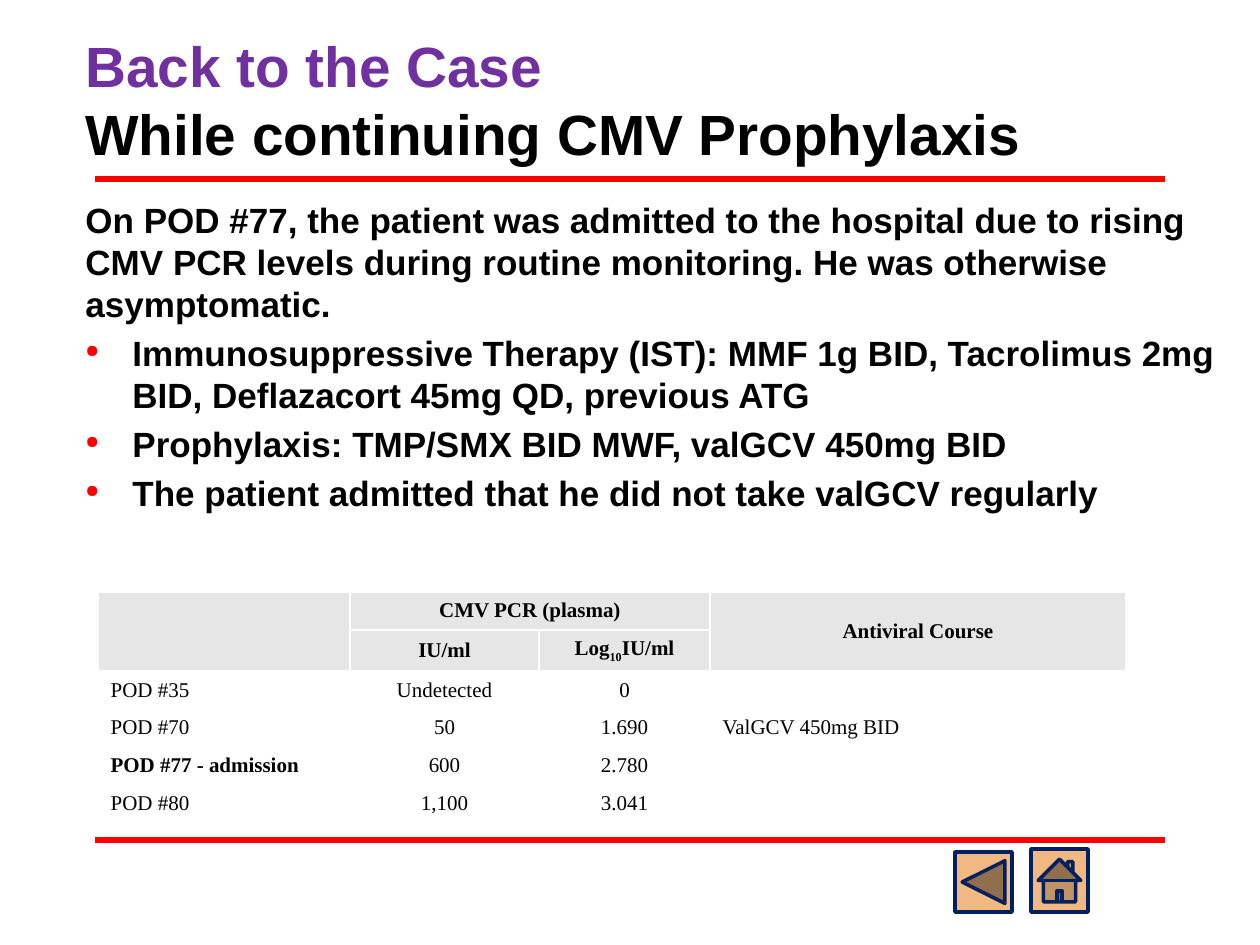
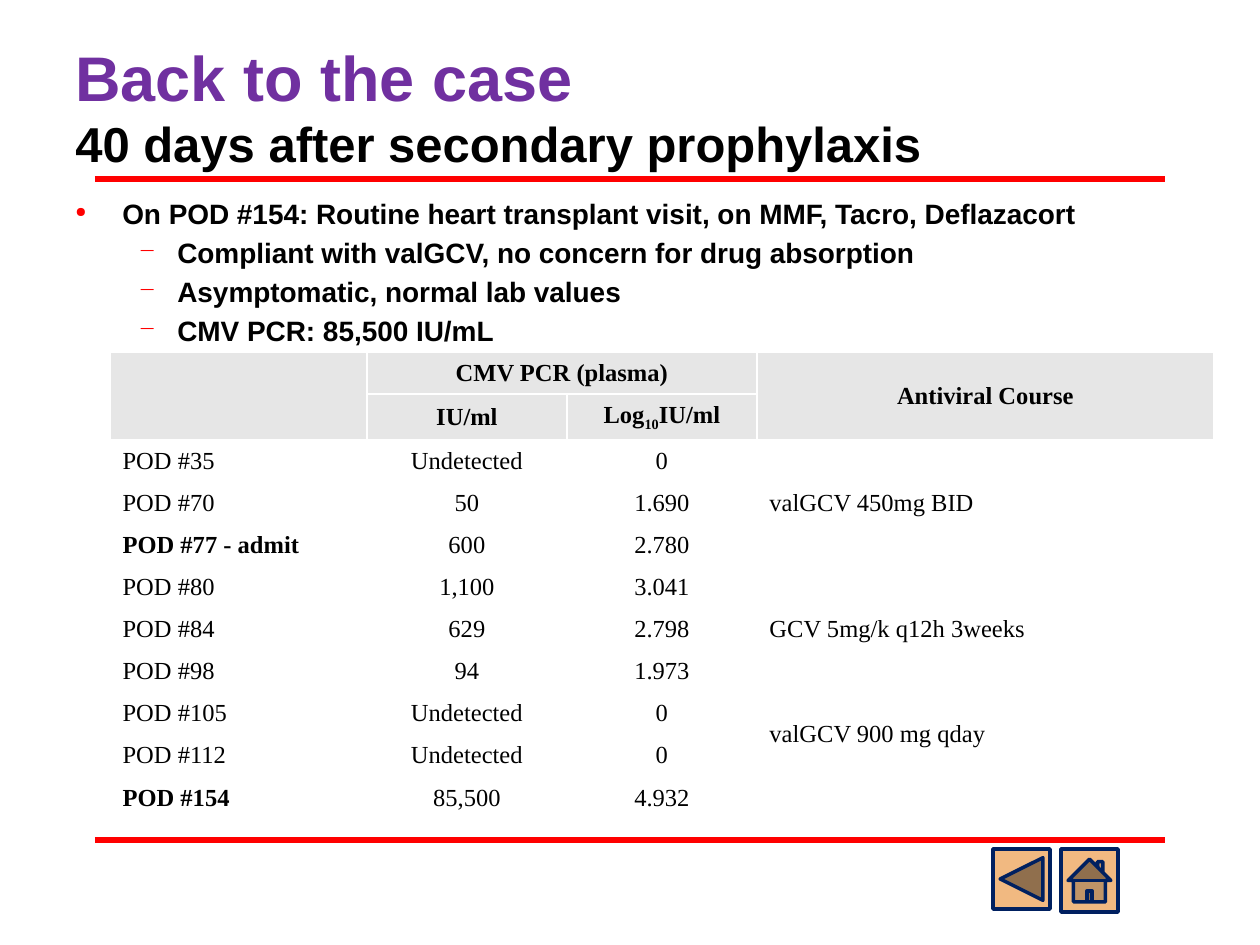
import pptx
import pptx.util
import pptx.dml.color
import pptx.enum.shapes
import pptx.enum.text
import pptx.oxml.ns
import lxml.etree
from dataclasses import dataclass

PX = 914400 / 126
WIDE, HIGH = 1260, 945
COLORS = {
    "title": "7030A0",
    "text": "000000",
    "rule": "FF0000",
    "head": "E6E6E6",
    "grid": "FFFFFF",
    "button": "F1B981",
    "edge": "002060",
}
SANS, SERIF = "Arial", "Times New Roman"
SHAPES = pptx.enum.shapes.MSO_SHAPE
ALIGN = pptx.enum.text.PP_ALIGN
ANCHOR = pptx.enum.text.MSO_ANCHOR


@dataclass
class Box:
    left: int
    top: int
    width: int
    height: int

    def emu(self) -> list[int]:
        return [px(n) for n in (self.left, self.top, self.width, self.height)]


@dataclass
class Line:
    text: str
    size: float
    color: str


@dataclass
class Bullet:
    mark: str
    scale: int
    left: int
    hang: int


@dataclass
class Point:
    text: str
    bullet: Bullet | None = None


@dataclass
class Row:
    day: str
    count: str
    log: str
    bold: bool = False


@dataclass
class Course:
    text: str
    first: int
    last: int


@dataclass
class Grid:
    box: Box
    size: int
    cols: list[int]
    sub: int
    rows: list[Row]
    drugs: list[Course]


@dataclass
class Page:
    title_box: Box
    title: list[Line]
    body_box: Box
    size: int
    points: list[Point]
    grid: Grid
    back: Box
    home: Box


DOT = Bullet("●", 50, 47, 47)
DASH = Bullet("─", 80, 102, 39)

EARLY = [
    Row("POD #35", "Undetected", "0"),
    Row("POD #70", "50", "1.690"),
]
DAY_80 = Row("POD #80", "1,100", "3.041")

PAGES = [
    Page(
        Box(73, 53, 1134, 120),
        [Line("Back to the Case", 32.4, "title"),
         Line("While continuing CMV Prophylaxis", 32.4, "text")],
        Box(73, 192, 1176, 640), 20,
        [Point("On POD #77, the patient was admitted to the hospital due to rising "
               "CMV PCR levels during routine monitoring. He was otherwise asymptomatic."),
         Point("Immunosuppressive Therapy (IST): MMF 1g BID, Tacrolimus 2mg BID, "
               "Deflazacort 45mg QD, previous ATG", DOT),
         Point("Prophylaxis: TMP/SMX BID MWF, valGCV 450mg BID", DOT),
         Point("The patient admitted that he did not take valGCV regularly", DOT)],
        Grid(Box(98, 592, 1028, 219), 12, [252, 189, 171, 416], 39,
             [*EARLY, Row("POD #77 - admission", "600", "2.780", True), DAY_80],
             [Course("ValGCV 450mg BID", 0, 2)]),
        Box(955, 852, 57, 60), Box(1031, 849, 57, 63),
    ),
    Page(
        Box(63, 21, 1134, 158),
        [Line("Back to the case", 36, "title"),
         Line("40 days after secondary prophylaxis", 28, "text")],
        Box(63, 190, 1124, 718), 16,
        [Point("On POD #154: Routine heart transplant visit, on MMF, Tacro, Deflazacort", DOT),
         Point("Compliant with valGCV, no concern for drug absorption", DASH),
         Point("Asymptomatic, normal lab values", DASH),
         Point("CMV PCR: 85,500 IU/mL", DASH)],
        Grid(Box(110, 352, 1104, 442), 14, [257, 200, 190, 457], 43,
             [*EARLY, Row("POD #77 - admit", "600", "2.780", True), DAY_80,
              Row("POD #84", "629", "2.798"),
              Row("POD #98", "94", "1.973"),
              Row("POD #105", "Undetected", "0"),
              Row("POD #112", "Undetected", "0"),
              Row("POD #154", "85,500", "4.932", True)],
             [Course("valGCV 450mg BID", 0, 2),
              Course("GCV 5mg/k q12h 3weeks", 3, 5),
              Course("valGCV 900 mg qday", 6, 7)]),
        Box(993, 849, 57, 60), Box(1061, 849, 57, 63),
    ),
]


def px(count: float) -> int:
    return round(count * PX)


def rgb(name: str) -> pptx.dml.color.RGBColor:
    return pptx.dml.color.RGBColor.from_string(COLORS[name])


def add_tag(parent, tag: str, **attrs: str):
    return lxml.etree.SubElement(parent, pptx.oxml.ns.qn(tag), attrs)


def set_font(font, name: str, size: float, bold: bool) -> None:
    font.name, font.size, font.bold = name, pptx.util.Pt(size), bold
    font.color.rgb = rgb("text")


def add_rule(slide, top: int) -> None:
    kind = pptx.enum.shapes.MSO_CONNECTOR.STRAIGHT
    rule = slide.shapes.add_connector(kind, px(95), px(top), px(1165), px(top))
    rule.line.color.rgb = rgb("rule")
    rule.line.width = pptx.util.Pt(3)
    add_tag(rule._element.spPr, "a:effectLst")


def add_title(slide, box: Box, lines: list[Line]) -> None:
    frame = slide.shapes.add_textbox(*box.emu()).text_frame
    frame.word_wrap = True
    frame.vertical_anchor = ANCHOR.BOTTOM
    para = frame.paragraphs[0]
    para.font.name, para.font.bold = SANS, True
    for index, line in enumerate(lines):
        if index:
            para.add_line_break()
        run = para.add_run()
        run.text = line.text
        run.font.size = pptx.util.Pt(line.size)
        run.font.color.rgb = rgb(line.color)


def set_bullet(para, bullet: Bullet) -> None:
    """Give an indented bullet; call before the paragraph font is set."""
    props = para._p.get_or_add_pPr()
    props.set("marL", str(px(bullet.left)))
    props.set("indent", str(-px(bullet.hang)))
    add_tag(add_tag(props, "a:buClr"), "a:srgbClr", val=COLORS["rule"])
    add_tag(props, "a:buSzPct", val=str(bullet.scale * 1000))
    add_tag(props, "a:buChar", char=bullet.mark)


def add_body(slide, box: Box, size: int, points: list[Point]) -> None:
    frame = slide.shapes.add_textbox(*box.emu()).text_frame
    frame.word_wrap = True
    for index, point in enumerate(points):
        para = frame.add_paragraph() if index else frame.paragraphs[0]
        if point.bullet:
            set_bullet(para, point.bullet)
        para.text = point.text
        para.space_before = pptx.util.Pt(size * 0.2)
        set_font(para.font, SANS, size, True)


def style_cell(cell, size: int, head: bool) -> None:
    """Set fill and borders, and keep an empty cell as low as its row."""
    if head:
        cell.fill.solid()
        cell.fill.fore_color.rgb = rgb("head")
    else:
        cell.fill.background()
    props = cell._tc.get_or_add_tcPr()
    for index, side in enumerate(("a:lnL", "a:lnR", "a:lnT", "a:lnB")):
        edge = add_tag(props, side, w="12700")
        add_tag(add_tag(edge, "a:solidFill"), "a:srgbClr", val=COLORS["grid"])
        props.insert(index, edge)
    add_tag(cell.text_frame.paragraphs[0]._p, "a:endParaRPr", sz=str(size * 100))


def write_cell(cell, parts: list[str], size: int, bold: bool, center: bool) -> None:
    """Write the parts in turn; every second one is a subscript."""
    cell.vertical_anchor = ANCHOR.MIDDLE
    para = cell.text_frame.paragraphs[0]
    para.alignment = ALIGN.CENTER if center else ALIGN.LEFT
    set_font(para.font, SERIF, size, bold)
    for index, part in enumerate(parts):
        run = para.add_run()
        run.text = part
        if index % 2:
            run._r.get_or_add_rPr().set("baseline", "-25000")


def add_grid(slide, grid: Grid) -> None:
    count = len(grid.rows) + 2
    table = slide.shapes.add_table(count, len(grid.cols), *grid.box.emu()).table
    table.first_row = table.horz_banding = False
    for col, width in zip(table.columns, grid.cols):
        col.width = px(width)
    for index, row in enumerate(table.rows):
        row.height = px(grid.sub if index == 1 else grid.size * 3 // 2 + 18)
        for cell in row.cells:
            style_cell(cell, grid.size, index < 2)

    spans = [(0, 0, 1, 0), (0, 1, 0, 2), (0, 3, 1, 3)]
    spans += [(drug.first + 2, 3, drug.last + 2, 3) for drug in grid.drugs]
    for top, left, low, right in spans:
        table.cell(top, left).merge(table.cell(low, right))

    heads = [(0, 1, ["CMV PCR (plasma)"]), (0, 3, ["Antiviral Course"]),
             (1, 1, ["IU/ml"]), (1, 2, ["Log", "10", "IU/ml"])]
    for top, left, parts in heads:
        write_cell(table.cell(top, left), parts, grid.size, True, True)
    for index, row in enumerate(grid.rows, 2):
        write_cell(table.cell(index, 0), [row.day], grid.size, row.bold, False)
        for left, text in enumerate((row.count, row.log), 1):
            write_cell(table.cell(index, left), [text], grid.size, False, True)
    for drug in grid.drugs:
        write_cell(table.cell(drug.first + 2, 3), [drug.text], grid.size, False, False)


def add_button(slide, kind, box: Box, turn: int = 0) -> None:
    button = slide.shapes.add_shape(kind, *box.emu())
    button.rotation = turn
    button.shadow.inherit = False
    button.fill.solid()
    button.fill.fore_color.rgb = rgb("button")
    button.line.color.rgb = rgb("edge")
    button.line.width = pptx.util.Pt(2)


def add_page(deck, page: Page) -> None:
    slide = deck.slides.add_slide(deck.slide_layouts[6])
    for top in (179, 840):
        add_rule(slide, top)
    add_title(slide, page.title_box, page.title)
    add_body(slide, page.body_box, page.size, page.points)
    add_grid(slide, page.grid)
    add_button(slide, SHAPES.ACTION_BUTTON_FORWARD_OR_NEXT, page.back, 180)
    add_button(slide, SHAPES.ACTION_BUTTON_HOME, page.home)


def main() -> None:
    deck = pptx.Presentation()
    deck.slide_width, deck.slide_height = px(WIDE), px(HIGH)
    for page in PAGES:
        add_page(deck, page)
    deck.save("out.pptx")


if __name__ == "__main__":
    main()
